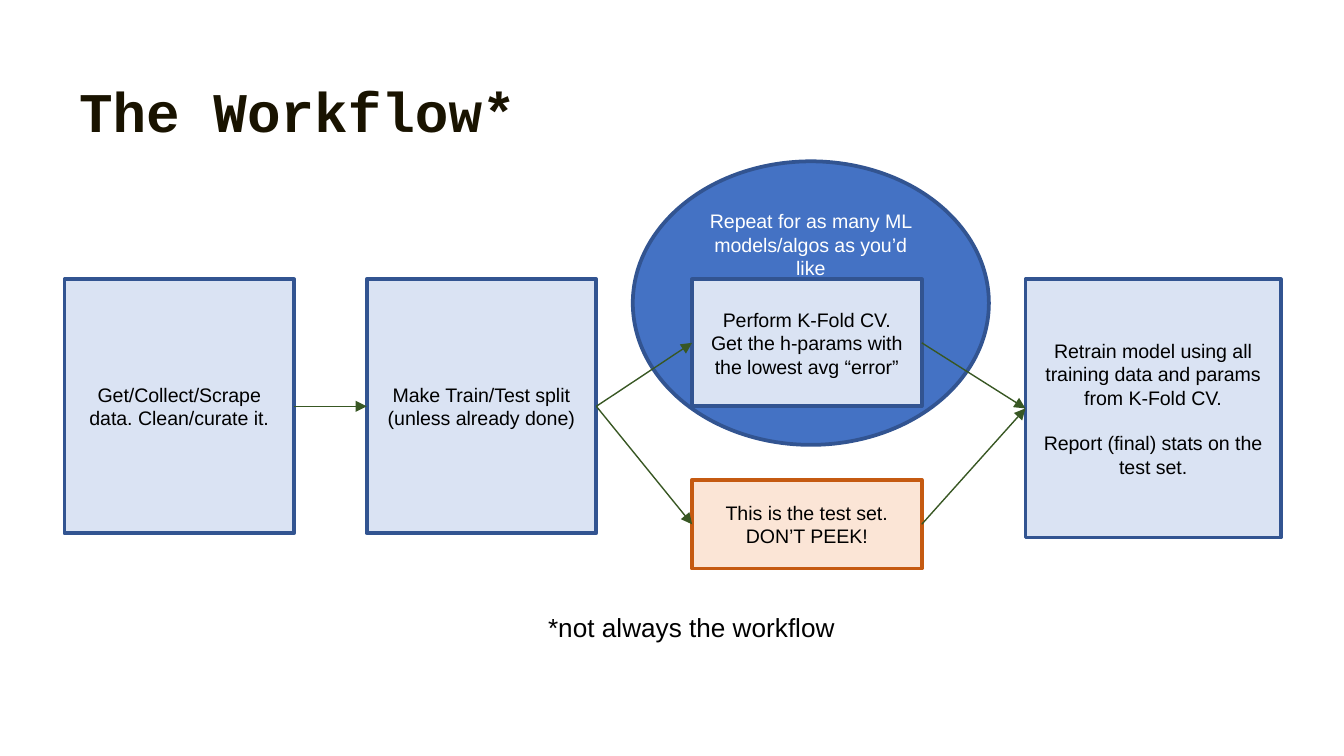
import pptx
import pptx.dml.color
import pptx.enum.shapes
import pptx.enum.text
import pptx.oxml
import pptx.util
from pptx.util import Cm

RGBColor = pptx.dml.color.RGBColor
Shape = pptx.enum.shapes.MSO_SHAPE
Anchor = pptx.enum.text.MSO_ANCHOR
Align = pptx.enum.text.PP_ALIGN

BLACK = RGBColor(0x00, 0x00, 0x00)
WHITE = RGBColor(0xFF, 0xFF, 0xFF)
TITLE_INK = RGBColor(0x19, 0x13, 0x00)
BLUE = RGBColor(0x44, 0x72, 0xC4)
DARK_BLUE = RGBColor(0x32, 0x54, 0x91)
PALE_BLUE = RGBColor(0xDA, 0xE3, 0xF3)
ORANGE = RGBColor(0xC5, 0x5A, 0x11)
PALE_ORANGE = RGBColor(0xFB, 0xE5, 0xD6)
GREEN = RGBColor(0x38, 0x57, 0x23)

ROW_TOP = 5.28
STEP_WIDTH = 4.34
STEP_HEIGHT = 4.8
BRANCH_LEFT = 13.08
LEFT_SITE, RIGHT_SITE = 1, 3


def add_text(paragraph, text, size, color, font="Arial", bold=False, align=Align.CENTER):
    """Write one formatted run into a paragraph."""
    paragraph.alignment = align
    run = paragraph.add_run()
    run.text = text
    run.font.name = font
    run.font.size = pptx.util.Pt(size)
    run.font.bold = bold
    run.font.color.rgb = color


def set_title(slide, text):
    """Place and format the slide title."""
    title = slide.shapes.title
    title.left, title.top, title.width, title.height = Cm(1.24), Cm(0.08), Cm(22.76), Cm(2.77)
    frame = title.text_frame
    frame.auto_size = pptx.enum.text.MSO_AUTO_SIZE.NONE
    frame.vertical_anchor = Anchor.BOTTOM
    add_text(frame.paragraphs[0], text, 30, TITLE_INK, "Courier New", True, Align.LEFT)


def add_step(slide, bounds, texts, fill=PALE_BLUE, border=DARK_BLUE, ink=BLACK,
             outline=Shape.RECTANGLE, anchor=Anchor.MIDDLE):
    """Add a filled, outlined step with centred paragraphs."""
    step = slide.shapes.add_shape(outline, *map(Cm, bounds))
    step.shadow.inherit = False
    step.fill.solid()
    step.fill.fore_color.rgb = fill
    step.line.color.rgb = border
    step.line.width = pptx.util.Pt(2)
    frame = step.text_frame
    frame.word_wrap = True
    frame.vertical_anchor = anchor
    for index, text in enumerate(texts):
        paragraph = frame.add_paragraph() if index else frame.paragraphs[0]
        if index:
            paragraph.space_before = pptx.util.Pt(12)
        add_text(paragraph, text, 10.5, ink)
    return step


def add_arrow(slide, source, target):
    """Join the right side of one step to the left side of another."""
    arrow = slide.shapes.add_connector(pptx.enum.shapes.MSO_CONNECTOR.STRAIGHT, 0, 0, 0, 0)
    arrow.begin_connect(source, RIGHT_SITE)
    arrow.end_connect(target, LEFT_SITE)
    arrow.line.color.rgb = GREEN
    arrow.line.width = pptx.util.Pt(0.75)
    namespace = pptx.oxml.ns.nsdecls("a")
    arrow.line._get_or_add_ln().append(
        pptx.oxml.parse_xml(f'<a:tailEnd {namespace} type="triangle"/>'))
    arrow._element.spPr.append(pptx.oxml.parse_xml(f"<a:effectLst {namespace}/>"))


def add_footnote(slide, text):
    """Add the centred remark under the diagram."""
    footnote = slide.shapes.add_textbox(Cm(6.43), Cm(11.43), Cm(13.28), Cm(1.02))
    footnote.text_frame.word_wrap = True
    add_text(footnote.text_frame.paragraphs[0], text, 14, BLACK)


def main():
    """Build the workflow slide."""
    deck = pptx.Presentation()
    deck.slide_width, deck.slide_height = Cm(25.4), Cm(14.29)
    slide = deck.slides.add_slide(deck.slide_layouts[5])
    set_title(slide, "The Workflow*")

    add_step(slide, (11.96, 3.05, 6.73, 5.36),
             ["Repeat for as many ML models/algos as you’d like"],
             fill=BLUE, ink=WHITE, outline=Shape.OVAL, anchor=Anchor.TOP)
    collect = add_step(slide, (1.22, ROW_TOP, STEP_WIDTH, STEP_HEIGHT),
                       ["Get/Collect/Scrape data. Clean/curate it."])
    split = add_step(slide, (6.93, ROW_TOP, STEP_WIDTH, STEP_HEIGHT),
                     ["Make Train/Test split (unless already done)"])
    cross_validate = add_step(slide, (BRANCH_LEFT, ROW_TOP, STEP_WIDTH, STEP_HEIGHT / 2),
                              ["Perform K-Fold CV. Get the h-params with the lowest avg “error”"])
    test_set = add_step(slide, (BRANCH_LEFT, 9.07, STEP_WIDTH, 1.68),
                        ["This is the test set. DON’T PEEK!"],
                        fill=PALE_ORANGE, border=ORANGE)
    retrain = add_step(slide, (19.38, ROW_TOP, 4.83, 4.88),
                       ["Retrain model using all training data and params from K-Fold CV.",
                        "Report (final) stats on the test set."])

    add_arrow(slide, collect, split)
    for branch in (cross_validate, test_set):
        add_arrow(slide, split, branch)
        add_arrow(slide, branch, retrain)
    add_footnote(slide, "*not always the workflow")
    deck.save("out.pptx")


if __name__ == "__main__":
    main()
